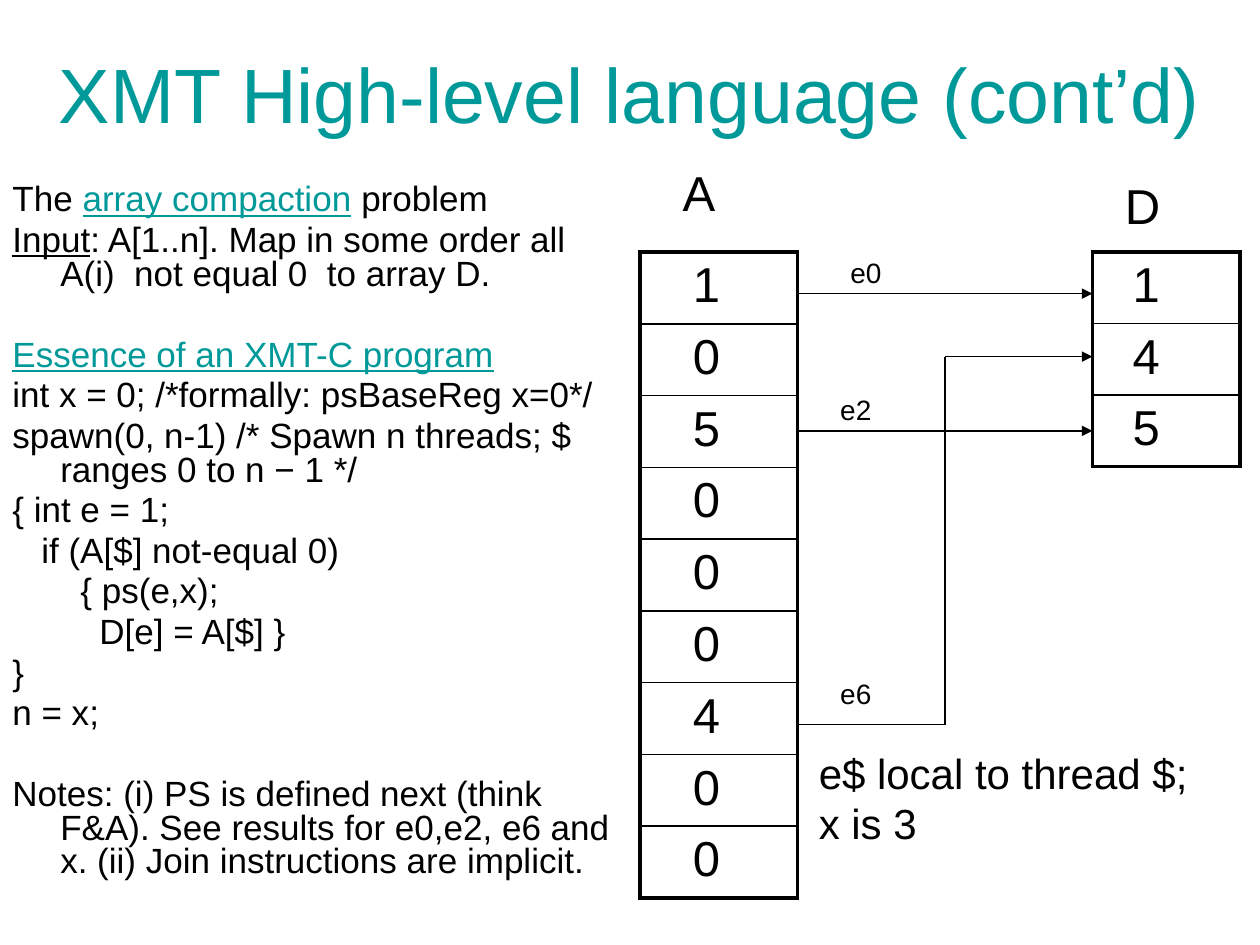
from pptx import Presentation
from pptx.dml.color import RGBColor
from pptx.enum.shapes import MSO_CONNECTOR as Connector
from pptx.enum.text import MSO_ANCHOR as Anchor, PP_ALIGN as Align
from pptx.oxml.ns import qn
from pptx.util import Inches, Pt
from lxml.etree import SubElement

BLACK, TEAL = "000000", "009999"
HANG = 0.38


def color(value):
    return RGBColor.from_string(value)


def write(para, text, size=20, fill=BLACK, underline=False):
    span = para.add_run()
    span.text = text
    span.font.name = "Arial"
    span.font.size = Pt(size)
    span.font.bold = False
    span.font.underline = underline
    span.font.color.rgb = color(fill)


class Deck:
    def __init__(self, width, height):
        self.deck = Presentation()
        self.deck.slide_width = Inches(width)
        self.deck.slide_height = Inches(height)
        self.page = self.deck.slides.add_slide(self.deck.slide_layouts[6])

    def frame(self, left, top, width, height, wrap=True):
        box = self.page.shapes.add_textbox(
            Inches(left), Inches(top), Inches(width), Inches(height))
        box.text_frame.word_wrap = wrap
        return box.text_frame

    def title(self, text, *place):
        frame = self.frame(*place)
        frame.vertical_anchor = Anchor.MIDDLE
        para = frame.paragraphs[0]
        para.alignment = Align.CENTER
        write(para, text, size=44, fill=TEAL)

    def label(self, lines, *place, size):
        frame = self.frame(*place, wrap=False)
        for index, line in enumerate(lines):
            para = frame.add_paragraph() if index else frame.paragraphs[0]
            write(para, line, size=size)

    def body(self, items, *place):
        frame = self.frame(*place)
        for index, (spans, indent, before) in enumerate(items):
            para = frame.add_paragraph() if index else frame.paragraphs[0]
            para.line_spacing = 0.8
            para.space_before = Pt(before)
            props = para._p.get_or_add_pPr()
            props.set("marL", str(Inches(indent or HANG)))
            props.set("indent", str(Inches(0 if indent else -HANG)))
            for text, style in spans:
                write(para, text, **style)

    def border(self, cell, side, width):
        line = SubElement(cell._tc.get_or_add_tcPr(), qn("a:" + side), w=str(Pt(width)))
        fill = SubElement(line, qn("a:solidFill"))
        SubElement(fill, qn("a:srgbClr"), val=BLACK)

    def array(self, values, left, top, width, row_height, margin):
        count = len(values)
        table = self.page.shapes.add_table(
            count, 1, Inches(left), Inches(top),
            Inches(width), Inches(row_height * count)).table
        table.first_row = table.horz_banding = False
        for index, value in enumerate(values):
            table.rows[index].height = Inches(row_height)
            cell = table.cell(index, 0)
            cell.margin_left = Inches(margin)
            write(cell.text_frame.paragraphs[0], str(value), size=28)
            self.border(cell, "lnL", 2.25)
            self.border(cell, "lnR", 2.25)
            self.border(cell, "lnT", 1 if index else 2.25)
            self.border(cell, "lnB", 1 if index < count - 1 else 2.25)
            cell.fill.background()

    def line(self, start, end, arrow=False):
        line = self.page.shapes.add_connector(
            Connector.STRAIGHT, *(Inches(value) for value in start + end))
        line.line.color.rgb = color(BLACK)
        line.line.width = Pt(0.75)
        if arrow:
            SubElement(line.line._get_or_add_ln(), qn("a:tailEnd"), type="triangle")
        SubElement(line._element.spPr, qn("a:effectLst"))

    def save(self):
        self.deck.save("out.pptx")


def item(*spans, indent=0, before=4):
    return [(span, {}) if isinstance(span, str) else span for span in spans], indent, before


def main():
    deck = Deck(10, 7.5)
    deck.title("XMT High-level language (cont’d)", 0, 0.3, 10, 0.87)

    teal_link = {"fill": TEAL, "underline": True}
    gap = 27
    deck.body([
        item("The ", ("array compaction", teal_link), " problem"),
        item(("Input", {"underline": True}),
             ": A[1..n]. Map in some order all A(i)  not equal 0  to array D."),
        item(("Essence of an XMT-C program", teal_link), before=gap),
        item("int x = 0; /*formally: psBaseReg x=0*/"),
        item("spawn(0, n-1) /* Spawn n threads; $ ranges 0 to n − 1 */"),
        item("{ int e = 1;"),
        item("if (A[$] not-equal 0)", indent=0.23),
        item("{ ps(e,x);", indent=0.54),
        item("D[e] = A[$] }", indent=0.69),
        item("}"),
        item("n = x;"),
        item("Notes: (i) PS is defined next (think F&A). See results for e0,e2, e6 and x. "
             "(ii) Join instructions are implicit.", before=gap),
    ], 0, 1.42, 5.08, 5.83)

    source_left, source_width, target_left = 5.08, 1.25, 8.67
    source_right = source_left + source_width
    deck.array([1, 0, 5, 0, 0, 0, 4, 0, 0], source_left, 2, source_width, 0.57, 0.42)
    deck.array([1, 4, 5], target_left, 2, 1.17, 0.53, 0.32)

    for y in (2.33, 3.42):
        deck.line((source_right, y), (target_left, y), arrow=True)
    bend, low, high = 7.5, 5.75, 2.83
    deck.line((source_right, low), (bend, low))
    deck.line((bend, low), (bend, high))
    deck.line((bend, high), (target_left, high), arrow=True)

    for name, left, top in (("e0", 6.65, 1.98), ("e2", 6.57, 3.07), ("e6", 6.57, 5.32)):
        deck.label([name], left, top, 0.45, 0.37, size=16)
    for name, left, top in (("A", 5.32, 1.24), ("D", 8.83, 1.34)):
        deck.label([name], left, top, 0.47, 0.57, size=28)
    deck.label(["e$ local to thread $;", "x is 3"], 6.4, 5.88, 3.13, 0.9, size=24)
    deck.save()


if __name__ == "__main__":
    main()
